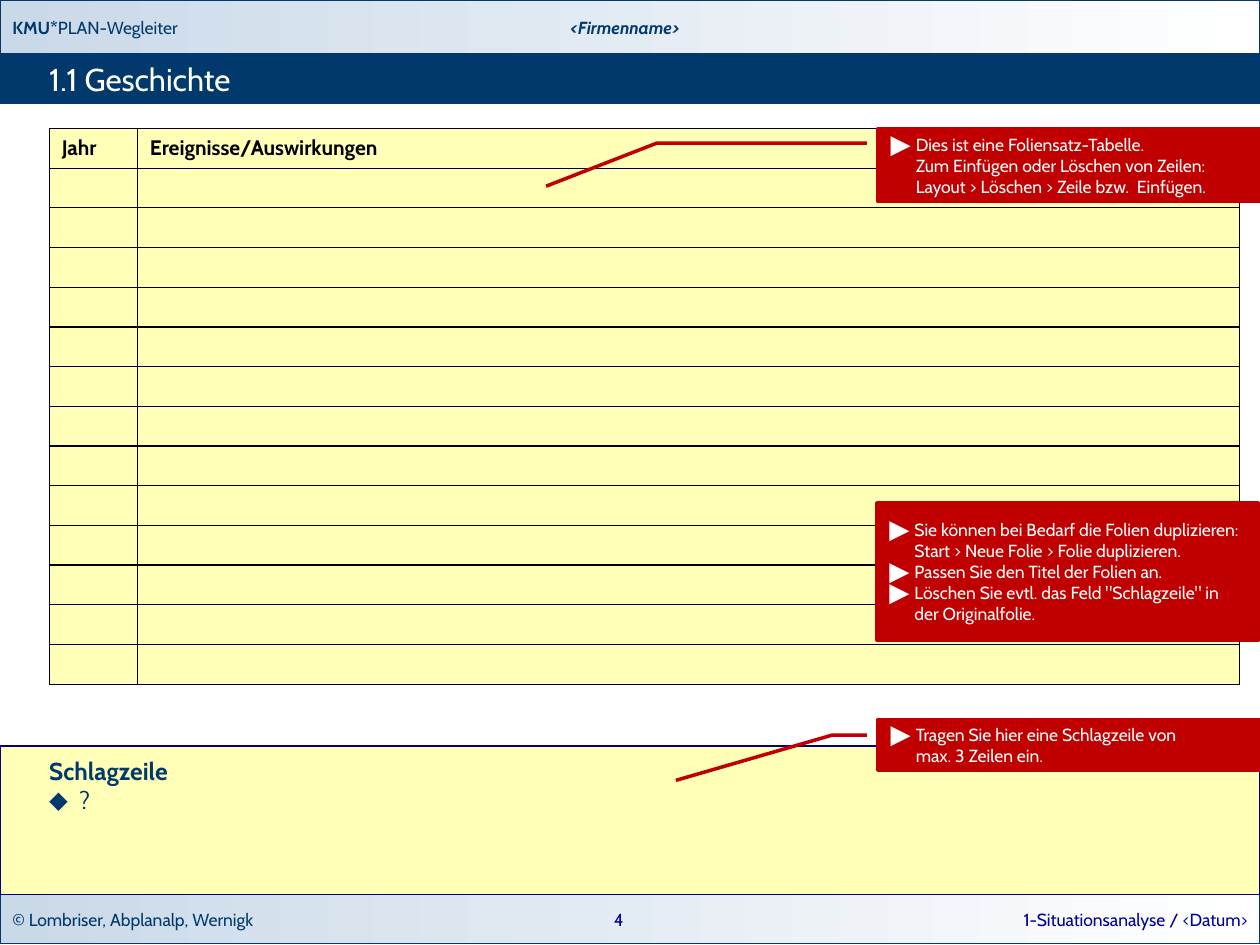
from lxml import etree
from pptx import Presentation, util as u
from pptx.dml.color import RGBColor
from pptx.enum import shapes, text
from pptx.oxml import ns

WIDTH, HEIGHT = u.Inches(10), u.Inches(7.5)
FONT = "Cabin"
COLORS = {"navy": "01396C", "pale": "CAD9E8", "white": "FFFFFF", "yellow": "FFFFB7",
          "red": "C00000", "blue": "000099", "edge": "000080", "black": "000000"}
LEFT, CENTER, RIGHT = text.PP_ALIGN.LEFT, text.PP_ALIGN.CENTER, text.PP_ALIGN.RIGHT
RECT, CALLOUT = shapes.MSO_SHAPE.RECTANGLE, shapes.MSO_SHAPE.LINE_CALLOUT_2

TITLE = "1.1 Geschichte"
HEADERS = ["Jahr", "Ereignisse/Auswirkungen"]
ROWS, COLUMN_SHARES = 14, [7, 87.5]
BARS = [
    ((0, 94.67, 100, 5.2), [("© Lombriser, Abplanalp, Wernigk", False)]),
    ((0, 0, 100, 5.73), [("KMU*", True), ("PLAN-Wegleiter", False)]),
]
LABELS = [
    ((31.9, 0, 35.4, 5.87), "<Firmenname>", CENTER, "navy", True),
    ((68.3, 94.67, 31.7, 5.33), "1-Situationsanalyse / <Datum>", RIGHT, "blue", False),
    ((46.7, 94.67, 4.8, 5.2), "4", CENTER, "blue", False),
]
HEADLINE = ((0, 78.93, 100, 15.73), "Schlagzeile", "?")
NOTES = [
    ((69.7, 13.6, 30.3, 7.73), [0.2, -0.03, 0.2, -0.58, 0.79, -0.87],
     ["Dies ist eine Foliensatz-Tabelle.\nZum Einfügen oder Löschen von Zeilen:\n"
      "Layout > Löschen > Zeile bzw.  Einfügen."]),
    ((69.6, 53.2, 30.3, 14.53), [],
     ["Sie können bei Bedarf die Folien duplizieren:\nStart > Neue Folie > Folie duplizieren.",
      "Passen Sie den Titel der Folien an.",
      'Löschen Sie evtl. das Feld "Schlagzeile" in der Originalfolie.']),
    ((69.7, 76.13, 30.3, 5.33), [0.31, -0.03, 0.31, -0.12, 1.21, -0.53],
     ["Tragen Sie hier eine Schlagzeile von\nmax. 3 Zeilen ein."]),
]


def rgb(name):
    return RGBColor.from_string(COLORS[name])


def place(area):
    return [int(share * side / 100) for share, side in zip(area, (WIDTH, HEIGHT) * 2)]


def add_child(parent, tag, **attributes):
    child = etree.SubElement(parent, ns.qn(tag))
    for key, value in attributes.items():
        child.set(key, str(value))
    return child


def style(para, size, color, bold=None, italic=None, align=LEFT):
    para.alignment = align
    font = para.font
    font.name, font.size, font.bold, font.italic = FONT, u.Pt(size), bold, italic
    font.color.rgb = rgb(color)


def add_bullet(para, char, indent, percent, color):
    props = para._p.get_or_add_pPr()
    props.set("marL", str(u.Inches(indent)))
    props.set("indent", str(-u.Inches(indent)))
    add_child(add_child(props, "a:buClr"), "a:srgbClr", val=COLORS[color])
    add_child(props, "a:buSzPct", val=percent * 1000)
    add_child(props, "a:buFont", typeface="DejaVu Sans")
    add_child(props, "a:buChar", char=char)


def set_frame(frame, insets, anchor=text.MSO_ANCHOR.MIDDLE):
    frame.word_wrap = True
    frame.auto_size = text.MSO_AUTO_SIZE.NONE
    frame.vertical_anchor = anchor
    (frame.margin_left, frame.margin_top,
     frame.margin_right, frame.margin_bottom) = map(u.Inches, insets)


def add_box(page, kind, area, fill, line, weight=0.75):
    box = page.shapes.add_shape(kind, *place(area))
    box.shadow.inherit = False
    if fill == "fade":
        box.fill.gradient()
        box.fill.gradient_angle = 0
        for stop, color in zip(box.fill.gradient_stops, ("pale", "white")):
            stop.color.rgb = rgb(color)
    else:
        box.fill.solid()
        box.fill.fore_color.rgb = rgb(fill)
    box.line.color.rgb = rgb(line)
    box.line.width = u.Pt(weight)
    return box


def add_bars(page):
    for area, spans in BARS:
        box = add_box(page, RECT, area, "fade", "navy")
        set_frame(box.text_frame, (0.1, 0.05, 0.1, 0.05))
        para = box.text_frame.paragraphs[0]
        style(para, 10, "navy")
        for words, bold in spans:
            span = para.add_run()
            span.text, span.font.bold = words, bold
    add_box(page, RECT, (0, 5.73, 100, 5.2), "navy", "navy")


def add_labels(page):
    for area, words, align, color, strong in LABELS:
        box = page.shapes.add_textbox(*place(area))
        set_frame(box.text_frame, (0.1, 0.05, 0.1, 0.05))
        para = box.text_frame.paragraphs[0]
        para.text = words
        style(para, 10, color, strong, strong, align)


def format_title(page):
    title = page.shapes.title
    title.left, title.top, title.width, title.height = place((3.9, 5.73, 92.9, 5.2))
    set_frame(title.text_frame, (0, 0, 0, 0))
    title.text_frame.text = TITLE
    style(title.text_frame.paragraphs[0], 18, "white")
    page.shapes._spTree.append(title._element)


def add_borders(cell):
    props = cell._tc.get_or_add_tcPr()
    for index, side in enumerate(("a:lnL", "a:lnR", "a:lnT", "a:lnB")):
        border = etree.Element(ns.qn(side), w=str(u.Pt(0.75)))
        add_child(add_child(border, "a:solidFill"), "a:srgbClr", val=COLORS["black"])
        props.insert(index, border)


def add_history(page):
    area = place((3.9, 13.6, sum(COLUMN_SHARES), 58.8))
    table = page.shapes.add_table(ROWS, len(HEADERS), *area).table
    table.first_row = table.horz_banding = False
    for column, share in zip(table.columns, COLUMN_SHARES):
        column.width = int(WIDTH * share / 100)
    for row in table.rows:
        row.height = area[3] // ROWS
    for cell in table.iter_cells():
        cell.fill.solid()
        cell.fill.fore_color.rgb = rgb("yellow")
        cell.margin_top = cell.margin_bottom = 0
        cell.vertical_anchor = text.MSO_ANCHOR.MIDDLE
        add_borders(cell)
        style(cell.text_frame.paragraphs[0], 12, "black", True)
    for cell, words in zip(table.rows[0].cells, HEADERS):
        cell.text_frame.paragraphs[0].text = words


def add_headline(page):
    area, heading, entry = HEADLINE
    frame = add_box(page, RECT, area, "yellow", "edge").text_frame
    set_frame(frame, (0.39, 0.08, 0.2, 0.08), text.MSO_ANCHOR.TOP)
    first, second = frame.paragraphs[0], frame.add_paragraph()
    first.text, second.text = heading, entry
    add_bullet(second, "⬥", 0.24, 110, "navy")
    style(first, 14, "navy", True)
    style(second, 14, "navy", False)


def add_note(page, area, leader, entries):
    box = add_box(page, CALLOUT if leader else RECT, area, "red", "red", 2)
    for index, value in enumerate(leader):
        box.adjustments[index] = value
    frame = box.text_frame
    set_frame(frame, (0.1, 0.04, 0.1, 0.04))
    for index, words in enumerate(entries):
        para = frame.add_paragraph() if index else frame.paragraphs[0]
        para.text = words
        add_bullet(para, "▶", 0.2, 150, "white")
        style(para, 10, "white")


def main():
    deck = Presentation()
    deck.slide_width, deck.slide_height = WIDTH, HEIGHT
    page = deck.slides.add_slide(deck.slide_layouts.get_by_name("Title Only"))
    add_bars(page)
    add_labels(page)
    format_title(page)
    add_history(page)
    add_headline(page)
    for note in NOTES:
        add_note(page, *note)
    deck.save("out.pptx")


if __name__ == "__main__":
    main()
